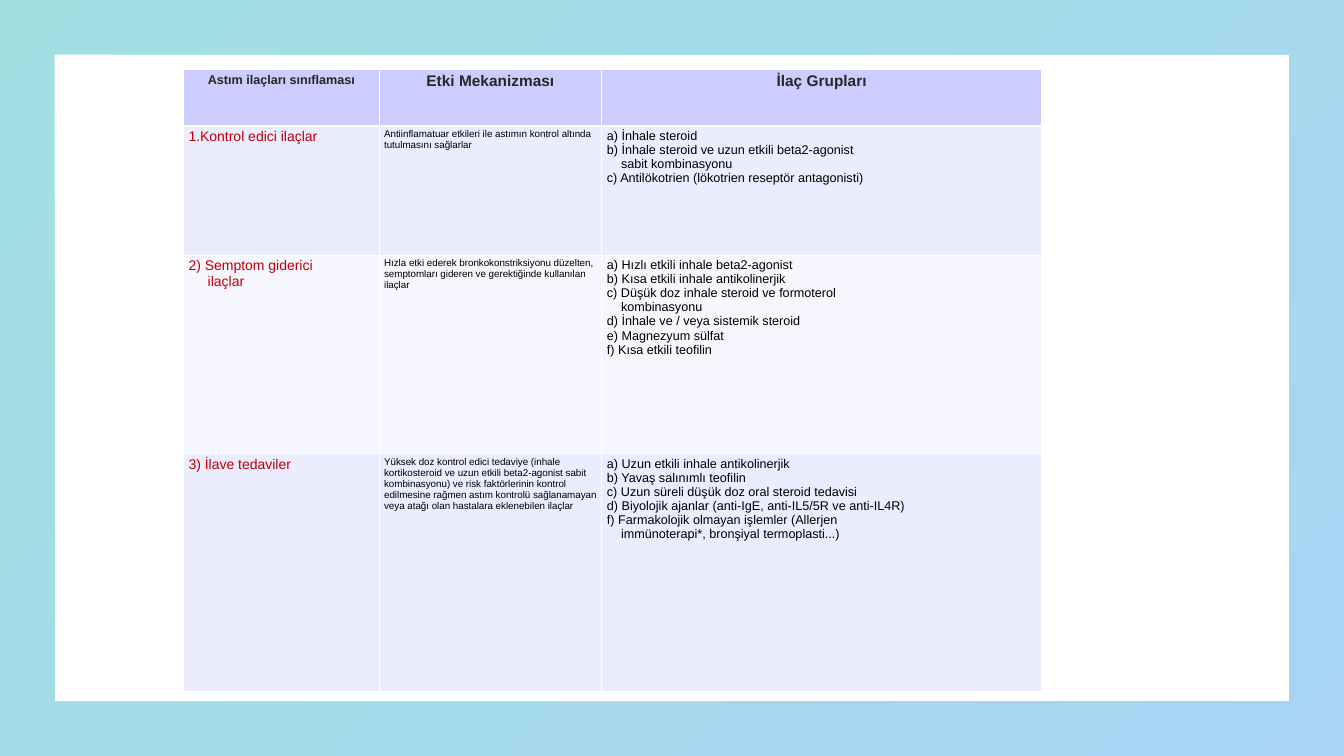
"""Builds a one-slide table of asthma drug classes inside a gradient frame."""
from dataclasses import dataclass

from lxml import etree
from pptx import Presentation
from pptx.dml.color import RGBColor
from pptx.enum.shapes import MSO_SHAPE
from pptx.enum.text import PP_ALIGN
from pptx.oxml.ns import qn
from pptx.util import Inches, Pt

FRAME = MSO_SHAPE.FRAME
CENTER, LEFT = PP_ALIGN.CENTER, PP_ALIGN.LEFT
WIDTH, HEIGHT = 13.33, 7.5
FONT = "Arial"
COLUMNS = [1.94, 2.21, 4.36]
THIN, THICK = 0.8, 2.4


@dataclass
class Style:
    size: float
    color: str = "000000"
    bold: bool = False
    align: PP_ALIGN = LEFT
    indent: float = 0


@dataclass
class Row:
    height: float
    fill: str
    cells: list[str]
    styles: list[Style]


HEAD = Style(11, "262626", True, CENTER)
HEADS = [Style(9, "262626", True, CENTER), HEAD, HEAD]
BODY = [Style(10, "C00000", indent=0.19), Style(7), Style(9, indent=0.14)]

ROWS = [
    Row(0.56, "CCCCFF", ["Astım ilaçları sınıflaması", "Etki Mekanizması", "İlaç Grupları"], HEADS),
    Row(1.28, "ECECFF", [
        "Kontrol edici ilaçlar",
        "Antiinflamatuar etkileri ile astımın kontrol altında tutulmasını sağlarlar",
        "a) İnhale steroid\n"
        "b) İnhale steroid ve uzun etkili beta2-agonist\n"
        "\tsabit kombinasyonu\n"
        "c) Antilökotrien (lökotrien reseptör antagonisti)",
    ], BODY),
    Row(1.97, "F6F6FF", [
        "2) Semptom giderici\n\tilaçlar",
        "Hızla etki ederek bronkokonstriksiyonu düzelten, semptomları gideren "
        "ve gerektiğinde kullanılan ilaçlar",
        "a) Hızlı etkili inhale beta2-agonist\n"
        "b) Kısa etkili inhale antikolinerjik\n"
        "c) Düşük doz inhale steroid ve formoterol\n"
        "\tkombinasyonu\n"
        "d) İnhale ve / veya sistemik steroid\n"
        "e) Magnezyum sülfat\n"
        "f) Kısa etkili teofilin",
    ], BODY),
    Row(2.36, "ECECFF", [
        "3) İlave tedaviler",
        "Yüksek doz kontrol edici tedaviye (inhale kortikosteroid ve uzun etkili "
        "beta2-agonist sabit kombinasyonu) ve risk faktörlerinin kontrol edilmesine "
        "rağmen astım kontrolü sağlanamayan veya atağı olan hastalara eklenebilen ilaçlar",
        "a) Uzun etkili inhale antikolinerjik\n"
        "b) Yavaş salınımlı teofilin\n"
        "c) Uzun süreli düşük doz oral steroid tedavisi\n"
        "d) Biyolojik ajanlar (anti-IgE, anti-IL5/5R ve anti-IL4R)\n"
        "f) Farmakolojik olmayan işlemler (Allerjen\n"
        "\timmünoterapi*, bronşiyal termoplasti...)",
    ], BODY),
]


def rgb(color: str) -> RGBColor:
    return RGBColor.from_string(color)


def add_frame(s) -> None:
    sp = s.shapes.add_shape(FRAME, 0, 0, Inches(WIDTH), Inches(HEIGHT))
    sp.adjustments[0] = 0.072
    sp.shadow.inherit = False
    sp.line.fill.background()
    sp.fill.gradient()
    sp.fill.gradient_angle = 315
    for stop, color in zip(sp.fill.gradient_stops, ("14B2B5", "2995E7")):
        stop.color.rgb = rgb(color)
    for clr in sp.element.spPr.iter(qn("a:srgbClr")):
        etree.SubElement(clr, qn("a:alpha"), val="40000")


def add_borders(cell, top: float, bottom: float) -> None:
    tc_pr = cell._tc.get_or_add_tcPr()
    for side, width in (("L", THIN), ("R", THIN), ("T", top), ("B", bottom)):
        ln = etree.SubElement(tc_pr, qn(f"a:ln{side}"), w=str(int(Pt(width))))
        fill = etree.SubElement(ln, qn("a:solidFill"))
        etree.SubElement(fill, qn("a:srgbClr"), val="FFFFFF")


def fill_cell(cell, text: str, style: Style) -> None:
    cell.margin_left = cell.margin_right = Inches(0.05)
    cell.margin_top = cell.margin_bottom = Inches(0.03)
    tf = cell.text_frame
    tf.word_wrap = True
    for i, line in enumerate(text.split("\n")):
        p = tf.add_paragraph() if i else tf.paragraphs[0]
        p.text = line.lstrip("\t")
        p.alignment = style.align
        if line.startswith("\t"):
            p._p.get_or_add_pPr().set("marL", str(Inches(style.indent)))
        for r in p.runs:
            r.font.name = FONT
            r.font.size = Pt(style.size)
            r.font.bold = style.bold
            r.font.color.rgb = rgb(style.color)


def number_paragraph(p) -> None:
    p_pr = p._p.get_or_add_pPr()
    p_pr.set("marL", "0")
    p_pr.set("indent", "0")
    etree.SubElement(p_pr, qn("a:buAutoNum"), type="arabicPeriod")


def add_drug_table(s) -> None:
    height = sum(row.height for row in ROWS)
    table = s.shapes.add_table(
        len(ROWS), len(COLUMNS), Inches(1.82), Inches(0.69),
        Inches(sum(COLUMNS)), Inches(height)).table
    for column, width in zip(table.columns, COLUMNS):
        column.width = Inches(width)
    for i, row in enumerate(ROWS):
        table.rows[i].height = Inches(row.height)
        for j, (text, style) in enumerate(zip(row.cells, row.styles)):
            cell = table.cell(i, j)
            add_borders(cell, THICK if i == 1 else THIN, THICK if i == 0 else THIN)
            cell.fill.solid()
            cell.fill.fore_color.rgb = rgb(row.fill)
            fill_cell(cell, text, style)
    number_paragraph(table.cell(1, 0).text_frame.paragraphs[0])


def main() -> None:
    prs = Presentation()
    prs.slide_width, prs.slide_height = Inches(WIDTH), Inches(HEIGHT)
    s = prs.slides.add_slide(prs.slide_layouts[6])
    add_frame(s)
    add_drug_table(s)
    prs.save("out.pptx")


if __name__ == "__main__":
    main()
